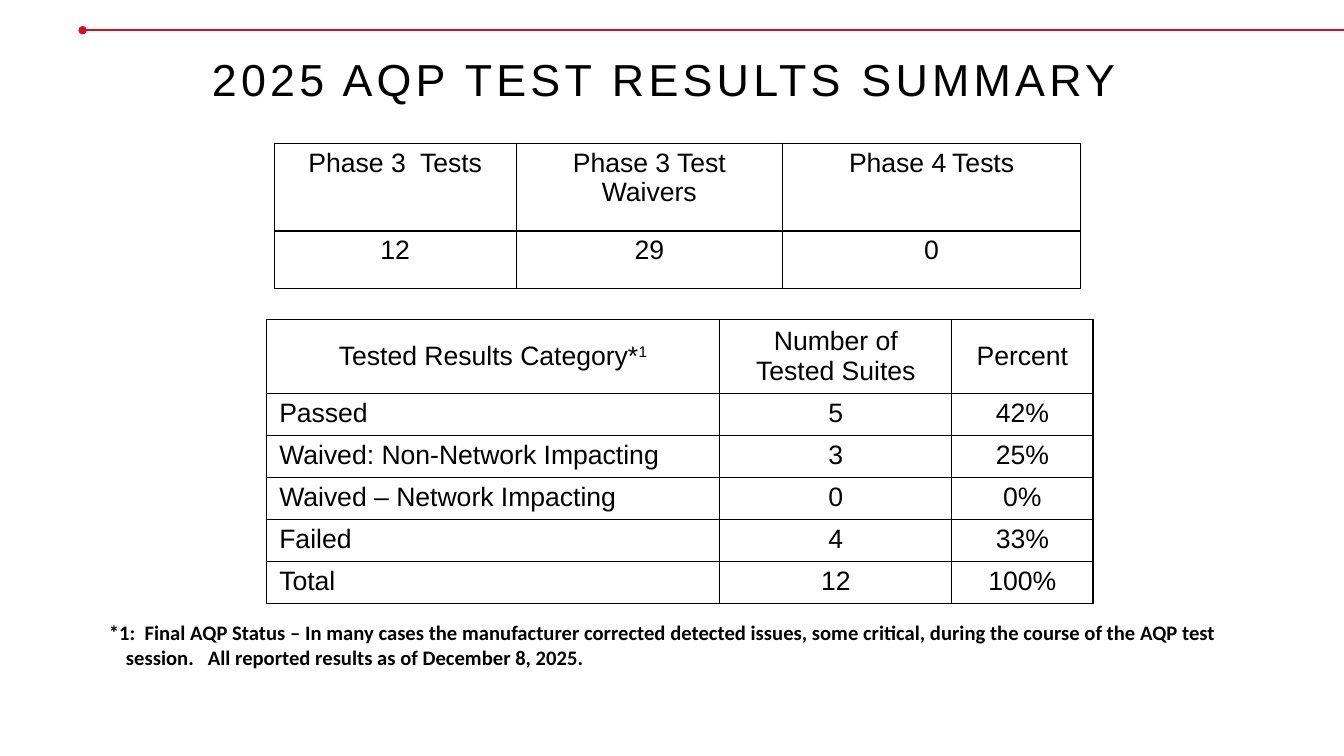
from lxml import etree
from pptx import Presentation
from pptx.dml.color import RGBColor
from pptx.enum.shapes import MSO_CONNECTOR
from pptx.enum.text import MSO_ANCHOR, PP_ALIGN
from pptx.oxml.ns import qn
from pptx.util import Pt

PX = 9144  # 100 px to the inch
SLIDE_WIDTH, SLIDE_HEIGHT = 1333, 750
LEFT, CENTER = PP_ALIGN.LEFT, PP_ALIGN.CENTER
TOP, MIDDLE = MSO_ANCHOR.TOP, MSO_ANCHOR.MIDDLE
STRAIGHT = MSO_CONNECTOR.STRAIGHT

BLACK, RED = "000000", "CE1126"
BODY = {"name": "Arial", "size": Pt(19), "bold": False}
TITLE = {"name": "Arial", "size": Pt(32)}
FOOTNOTE = {"name": "Calibri", "size": Pt(14.7), "bold": True}
THIN, THICK = 0.75, 1.5

PHASE_ROWS = [
    ["Phase 3  Tests", "Phase 3 Test Waivers",
     [("Phase 4", {}), (" ", {"size": Pt(15)}), ("Tests", {})]],
    ["12", "29", "0"],
]
RESULT_ROWS = [
    [[("Tested Results Category*", {}), ("1", {"baseline": 30000})],
     "Number of Tested Suites", "Percent"],
    ["Passed", "5", "42%"],
    ["Waived: Non-Network Impacting", "3", "25%"],
    ["Waived – Network Impacting", "0", "0%"],
    ["Failed", "4", "33%"],
    ["Total", "12", "100%"],
]


def color(value):
    return RGBColor.from_string(value)


def set_values(target, values):
    for name, value in values.items():
        setattr(target, name, value)


def margins(side, end):
    return {"margin_left": side * PX, "margin_right": side * PX,
            "margin_top": end * PX, "margin_bottom": end * PX}


class SlideBuilder:
    def __init__(self, slide, ink):
        self.slide = slide
        self.ink = ink

    def fill_paragraph(self, paragraph, content, style, align=LEFT):
        """Fill a paragraph from a string or a list of (text, changes) runs."""
        paragraph.alignment = align
        runs = [(content, {})] if isinstance(content, str) else content
        for text, changes in runs:
            run = paragraph.add_run()
            run.text = text
            values = {**style, **changes}
            baseline = values.pop("baseline", None)
            set_values(run.font, values)
            run.font.color.rgb = color(self.ink)
            if baseline:
                run.font._element.set("baseline", str(baseline))

    def text(self, left, top, width, height, content, style, align=LEFT):
        box = self.slide.shapes.add_textbox(left * PX, top * PX, width * PX, height * PX)
        frame = box.text_frame
        set_values(frame, {"word_wrap": True, "vertical_anchor": TOP, **margins(13, 7)})
        paragraph = frame.paragraphs[0]
        self.fill_paragraph(paragraph, content, style, align)
        return paragraph

    def dotted_line(self, start, end, y, line_color, weight):
        """Draw a horizontal line with a round dot at its start."""
        line = self.slide.shapes.add_connector(STRAIGHT, start * PX, y * PX, end * PX, y * PX)
        line.line.color.rgb = color(line_color)
        line.line.width = Pt(weight)
        outline = line._element.spPr.find(qn("a:ln"))
        etree.SubElement(outline, qn("a:headEnd"), type="oval")
        etree.SubElement(line._element.spPr, qn("a:effectLst"))

    def borders(self, cell, weights):
        properties = cell._tc.get_or_add_tcPr()
        for index, (side, weight) in enumerate(weights.items()):
            border = etree.Element(qn(f"a:ln{side}"), w=str(Pt(weight)))
            fill = etree.SubElement(border, qn("a:solidFill"))
            etree.SubElement(fill, qn("a:srgbClr"), val=self.ink)
            properties.insert(index, border)

    def table(self, left, top, widths, heights, rows, first_align=CENTER,
              header_anchor=TOP, right_edge=THIN):
        """Add a ruled table; first_align applies below the header in column one."""
        shape = self.slide.shapes.add_table(len(rows), len(widths), left * PX, top * PX,
                                            sum(widths) * PX, sum(heights) * PX)
        table = shape.table
        set_values(table, {"first_row": False, "horz_banding": False})
        for column, width in zip(table.columns, widths):
            column.width = width * PX
        for row, height in zip(table.rows, heights):
            row.height = height * PX
        for i, values in enumerate(rows):
            for j, content in enumerate(values):
                cell = table.cell(i, j)
                anchor = header_anchor if i == 0 else TOP
                set_values(cell, {"vertical_anchor": anchor, **margins(13, 5)})
                cell.fill.background()
                self.borders(cell, {
                    "L": THIN,
                    "R": right_edge if j == len(widths) - 1 else THIN,
                    "T": THICK if i == 1 else THIN,
                    "B": THICK if i == 0 else THIN,
                })
                align = first_align if i and j == 0 else CENTER
                self.fill_paragraph(cell.text_frame.paragraphs[0], content, BODY, align)


def main():
    presentation = Presentation()
    presentation.slide_width = SLIDE_WIDTH * PX
    presentation.slide_height = SLIDE_HEIGHT * PX
    slide = presentation.slides.add_slide(presentation.slide_layouts[6])
    builder = SlideBuilder(slide, BLACK)

    builder.dotted_line(82, SLIDE_WIDTH, 30, RED, 1.5)
    title = builder.text(0, 55, SLIDE_WIDTH, 84, "2025 AQP TEST RESULTS SUMMARY ",
                         TITLE, CENTER)
    title.line_spacing = 0.8
    title.runs[0].font._element.set("spc", "300")

    builder.table(264, 317, [450, 230, 140], [72] + [41] * 5, RESULT_ROWS,
                  first_align=LEFT, header_anchor=MIDDLE, right_edge=THICK)
    builder.table(272, 142, [240, 264, 296], [87, 57], PHASE_ROWS)

    footnote = builder.text(
        95, 608, 1143, 66,
        "*1:  Final AQP Status – In many cases the manufacturer corrected detected issues, "
        "some critical, during the course of the AQP test session.   "
        "All reported results as of December 8, 2025.", FOOTNOTE)
    indent = 17 * PX
    properties = footnote._p.get_or_add_pPr()
    properties.set("marL", str(indent))
    properties.set("indent", str(-indent))

    presentation.save("out.pptx")


if __name__ == "__main__":
    main()
